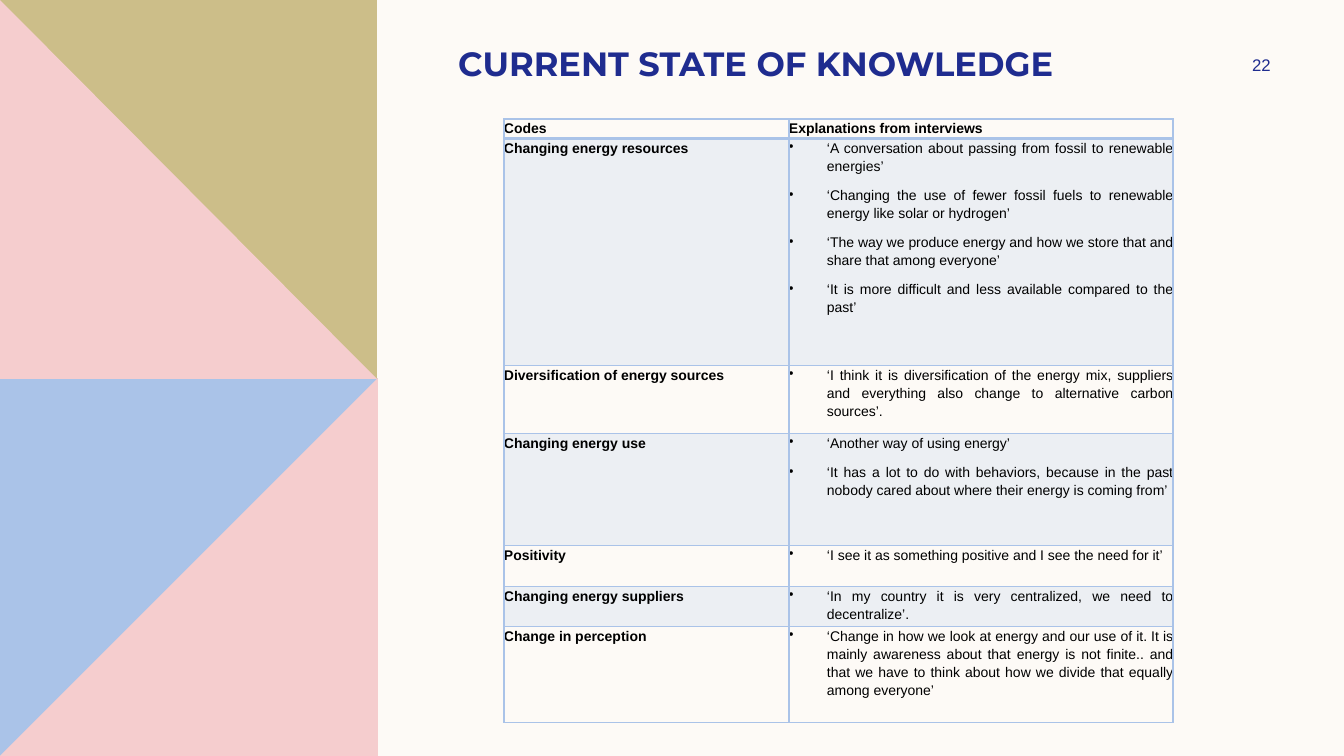
import pptx
import pptx.util
import pptx.dml.color
import pptx.enum.text
import pptx.oxml
import pptx.oxml.ns

SCALE = 914400 / 100.8
HEX = {"cream": "FDFAF6", "blue": "AAC3E8", "pink": "F5CDCE",
       "gold": "CCBE89", "navy": "1F2C8F", "black": "000000"}
ALIGN = pptx.enum.text.PP_ALIGN
ANCHOR = pptx.enum.text.MSO_ANCHOR
NS = pptx.oxml.ns.nsdecls("a")


def px(num):
    return pptx.util.Emu(round(num * SCALE))


def write(frame, lines, size=10, font="Arial", hue="black", bold=False,
          align=ALIGN.JUSTIFY, lead=1.0, after=0, mark=False):
    """Fill a text frame, one paragraph a line; mark adds bullets."""
    frame.word_wrap = True
    for i, line in enumerate(lines):
        para = frame.add_paragraph() if i else frame.paragraphs[0]
        para.alignment = align
        para.line_spacing = lead
        para.space_after = pptx.util.Pt(after)
        run = para.add_run()
        run.text = line
        run.font.size = pptx.util.Pt(size)
        run.font.name = font
        run.font.bold = bold
        run.font.color.rgb = pptx.dml.color.RGBColor.from_string(HEX[hue])
        if mark:
            props = para._p.get_or_add_pPr()
            props.set("marL", str(px(38)))
            props.set("indent", str(-px(38)))
            props.append(pptx.oxml.parse_xml(f'<a:buChar {NS} char="•"/>'))


deck = pptx.Presentation()
deck.slide_width, deck.slide_height = px(1344), px(756)
slide = deck.slides.add_slide(deck.slide_layouts[5])
back = slide.background.fill
back.solid()
back.fore_color.rgb = pptx.dml.color.RGBColor.from_string(HEX["cream"])

# Coloured triangles on the left
panels = [
    ("blue", [(0, 378), (378, 378), (378, 756), (0, 756)]),
    ("pink", [(378, 378), (378, 756), (0, 756)]),
    ("gold", [(0, 0), (377, 0), (377, 379), (0, 379)]),
    ("pink", [(0, 0), (377, 379), (0, 379)]),
]
for hue, points in panels:
    path = slide.shapes.build_freeform(*points[0], scale=SCALE)
    path.add_line_segments(points[1:], close=True)
    panel = path.convert_to_shape()
    panel.shadow.inherit = False
    panel.fill.solid()
    panel.fill.fore_color.rgb = pptx.dml.color.RGBColor.from_string(HEX[hue])
    panel.line.fill.background()

# Title and page number
title = slide.shapes.title
title.left, title.top, title.width, title.height = map(px, (448, 38, 746, 85))
title.text_frame.auto_size = pptx.enum.text.MSO_AUTO_SIZE.NONE
title.text_frame.vertical_anchor = ANCHOR.TOP
write(title.text_frame, ["CURRENT STATE OF KNOWLEDGE"], size=24,
      font="Montserrat", hue="navy", bold=True, align=ALIGN.LEFT)
page = slide.shapes.add_textbox(px(1207), px(50), px(109), px(30))
page.text_frame.vertical_anchor = ANCHOR.MIDDLE
write(page.text_frame, ["22"], size=12, hue="navy", align=ALIGN.CENTER)

# Codes and quotes: row height, code, explanations
rows = [
    (18, "Codes", ["Explanations from interviews"]),
    (227, "Changing energy resources", [
        "‘A conversation about passing from fossil to renewable energies’",
        "‘Changing the use of fewer fossil fuels to renewable energy like "
        "solar or hydrogen’",
        "‘The way we produce energy and how we store that and share that "
        "among everyone’",
        "‘It is more difficult and less available compared to the past’"]),
    (68, "Diversification of energy sources", [
        "‘I think it is diversification of the energy mix, suppliers and "
        "everything also change to alternative carbon sources’."]),
    (112, "Changing energy use", [
        "‘Another way of using energy’",
        "‘It has a lot to do with behaviors, because in the past nobody "
        "cared about where their energy is coming from’"]),
    (41, "Positivity", [
        "‘I see it as something positive and I see the need for it’"]),
    (40, "Changing energy suppliers", [
        "‘In my country it is very centralized, we need to decentralize’."]),
    (96, "Change in perception", [
        "‘Change in how we look at energy and our use of it. It is mainly "
        "awareness about that energy is not finite.. and that we have to "
        "think about how we divide that equally among everyone’"]),
]
high = sum(row[0] for row in rows)
table = slide.shapes.add_table(len(rows), 2, px(504), px(119),
                               px(669), px(high)).table
table.first_row = table.horz_banding = False
table.columns[0].width, table.columns[1].width = px(285), px(384)

for r, (tall, code, quotes) in enumerate(rows):
    table.rows[r].height = px(tall)
    for c, lines in enumerate(([code], quotes)):
        cell = table.cell(r, c)
        cell.margin_left = cell.margin_right = 0
        cell.margin_top = cell.margin_bottom = 0
        quote = r > 0 and c == 1
        write(cell.text_frame, lines, bold=not quote, mark=quote,
              lead=1.15, after=8)
        props = cell._tc.get_or_add_tcPr()
        if r % 2:
            cell.fill.solid()
            cell.fill.fore_color.rgb = pptx.dml.color.RGBColor.from_string(
                HEX["blue"])
            tint = props.find(".//" + pptx.oxml.ns.qn("a:srgbClr"))
            tint.append(pptx.oxml.parse_xml(f'<a:alpha {NS} val="20000"/>'))
        else:
            cell.fill.background()
        for i, side in enumerate("LRTB"):
            thick = (r, side) in ((0, "B"), (1, "T"))
            wide = pptx.util.Pt(2 if thick else 1)
            props.insert(i, pptx.oxml.parse_xml(
                f'<a:ln{side} {NS} w="{wide}"><a:solidFill>'
                f'<a:srgbClr val="{HEX["blue"]}"/></a:solidFill>'
                f'</a:ln{side}>'))

deck.save("out.pptx")
